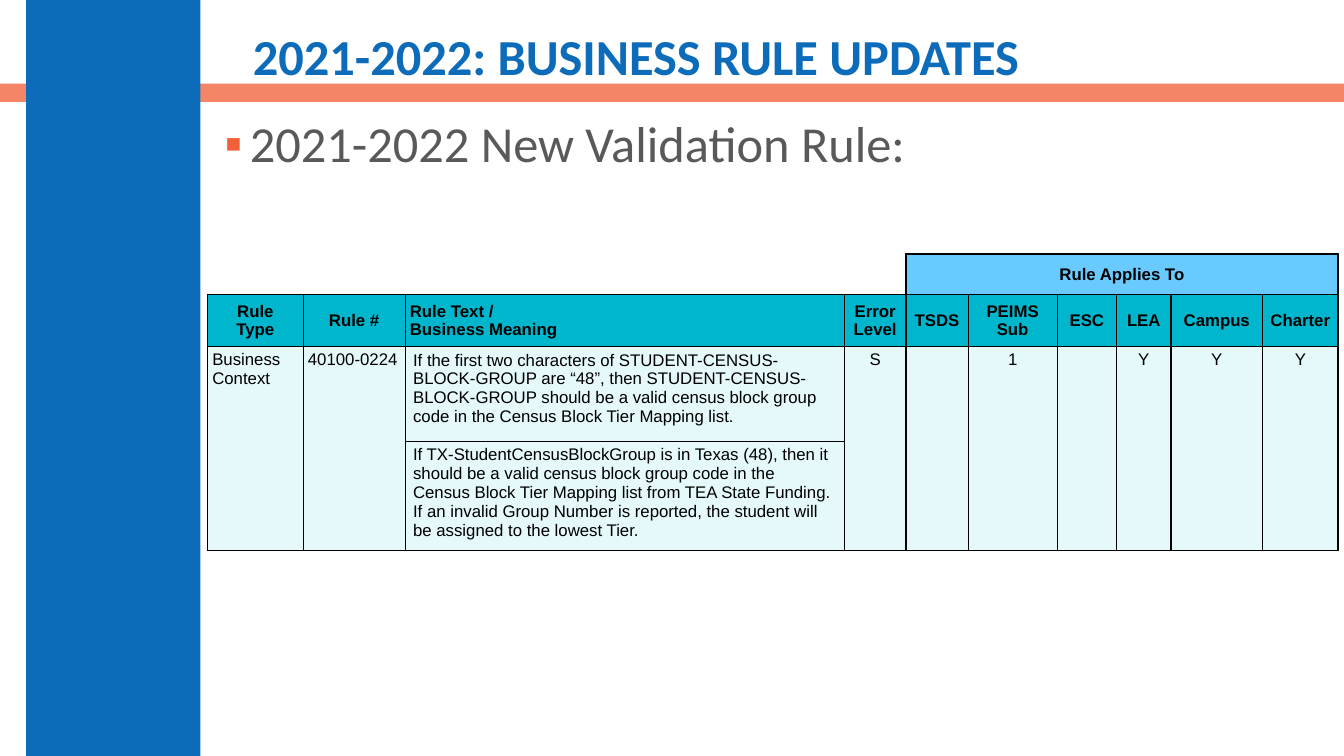
from dataclasses import dataclass

from lxml.etree import SubElement
from pptx import Presentation
from pptx.dml.color import RGBColor as Rgb
from pptx.enum.shapes import MSO_SHAPE as Form
from pptx.enum.text import MSO_ANCHOR as Anchor, MSO_AUTO_SIZE as Fit, PP_ALIGN as Align
from pptx.oxml.ns import qn
from pptx.util import Cm, Pt

HUES = {
    "blue": "0D6CB9",
    "coral": "F16038",
    "gray": "595959",
    "black": "000000",
    "white": "FFFFFF",
    "sky": "69CAFF",
    "teal": "00B6CD",
    "mist": "E5F8FA",
}
WIDTHS = (2.41, 2.57, 11.07, 1.55, 1.57, 2.24, 1.5, 1.37, 2.31, 1.9)
HEIGHTS = (1.02, 1.32, 2.39, 2.57)
HEADS = ("Rule\nType", "Rule #", "Rule Text /\nBusiness Meaning", "Error\nLevel",
         "TSDS", "PEIMS\nSub", "ESC", "LEA", "Campus", "Charter")
FACTS = (("Business", "Context"), ("40100-0224",),
         ("If the first two characters of STUDENT-CENSUS-BLOCK-GROUP are “48”, "
          "then STUDENT-CENSUS-BLOCK-GROUP should be a valid census block group "
          "code in the Census Block Tier Mapping list.",),
         ("S",), ("",), ("1",), ("",), ("Y",), ("Y",), ("Y",))
MEANING = ("If TX-StudentCensusBlockGroup is in Texas (48), then it should be a valid "
           "census block group code in the Census Block Tier Mapping list from TEA State "
           "Funding. If an invalid Group Number is reported, the student will be "
           "assigned to the lowest Tier.")
TEXT = 2
ERROR = 3


@dataclass
class Bar:
    left: float
    top: float
    width: float
    height: float
    hue: str
    alpha: int = 100


@dataclass
class Entry:
    row: int
    col: int
    lines: tuple[str, ...]
    hue: str
    bold: bool = False
    mid: bool = True
    wide: bool = False
    sides: str = "LRTB"


BARS = (
    Bar(0, 2.11, 33.87, 0.46, "coral", 76),
    Bar(0.66, 0, 4.39, 19.05, "blue"),
)


def tint(name: str) -> Rgb:
    return Rgb.from_string(HUES[name])


def style(font, size: int, hue: str, face: str, bold: bool = False) -> None:
    font.size = Pt(size)
    font.name = face
    font.bold = bold
    font.color.rgb = tint(hue)


def draw_bar(slide, bar: Bar) -> None:
    shape = slide.shapes.add_shape(Form.RECTANGLE, Cm(bar.left), Cm(bar.top),
                                   Cm(bar.width), Cm(bar.height))
    shape.shadow.inherit = False
    shape.line.fill.background()
    shape.fill.solid()
    shape.fill.fore_color.rgb = tint(bar.hue)
    if bar.alpha < 100:
        color = shape.fill._xPr.find(".//" + qn("a:srgbClr"))
        SubElement(color, qn("a:alpha"), val=str(bar.alpha * 1000))


def draw_title(slide) -> None:
    title = slide.shapes.title
    title.left, title.top = Cm(6.12), Cm(0.46)
    title.width, title.height = Cm(26.75), Cm(2.08)
    slide.shapes._spTree.append(title._element)
    frame = title.text_frame
    frame.auto_size = Fit.NONE
    frame.vertical_anchor = Anchor.MIDDLE
    para = frame.paragraphs[0]
    para.alignment = Align.LEFT
    para.line_spacing = 0.9
    run = para.add_run()
    run.text = "2021-2022: BUSINESS RULE UPDATES"
    style(run.font, 36, "blue", "Calibri", True)


def draw_point(slide) -> None:
    box = slide.shapes.add_textbox(Cm(5.41), Cm(2.87), Cm(28.17), Cm(2.62))
    frame = box.text_frame
    frame.word_wrap = True
    para = frame.paragraphs[0]
    para.line_spacing = 0.9
    props = para._p.get_or_add_pPr()
    props.set("marL", str(Cm(0.64)))
    props.set("indent", str(-Cm(0.64)))
    SubElement(SubElement(props, qn("a:buClr")), qn("a:srgbClr"), val=HUES["coral"])
    SubElement(props, qn("a:buFont"), typeface="Arial")
    SubElement(props, qn("a:buChar"), char="▪")
    run = para.add_run()
    run.text = "2021-2022 New Validation Rule:"
    style(run.font, 36, "gray", "Calibri")


def edge(cell, sides: str) -> None:
    props = cell._tc.get_or_add_tcPr()
    for side in "LRTB":
        line = SubElement(props, qn("a:ln" + side), w=str(Pt(1)))
        if side in sides:
            fill = SubElement(line, qn("a:solidFill"))
            SubElement(fill, qn("a:srgbClr"), val=HUES["black"])
        else:
            SubElement(line, qn("a:noFill"))


def draw_entry(table, entry: Entry) -> None:
    cell = table.cell(entry.row, entry.col)
    edge(cell, entry.sides)
    cell.fill.solid()
    cell.fill.fore_color.rgb = tint(entry.hue)
    cell.margin_left = cell.margin_right = Cm(0.2 if entry.wide else 0.12)
    cell.margin_top = cell.margin_bottom = Cm(0.1 if entry.wide else 0.08)
    cell.vertical_anchor = Anchor.MIDDLE if entry.bold else Anchor.TOP
    frame = cell.text_frame
    for spot, line in enumerate(entry.lines):
        para = frame.add_paragraph() if spot else frame.paragraphs[0]
        para.alignment = Align.CENTER if entry.mid else Align.LEFT
        style(para.font, 12, "black", "Arial", entry.bold)
        for turn, part in enumerate(line.split("\n")):
            if turn:
                para.add_line_break()
            if part:
                run = para.add_run()
                run.text = part
                style(run.font, 12, "black", "Arial", entry.bold)


def draw_table(slide) -> None:
    count = len(WIDTHS)
    table = slide.shapes.add_table(len(HEIGHTS), count, Cm(5.23), Cm(6.4),
                                   Cm(sum(WIDTHS)), Cm(sum(HEIGHTS))).table
    table.first_row = table.horz_banding = False
    for col, width in zip(table.columns, WIDTHS):
        col.width = Cm(width)
    for row, height in zip(table.rows, HEIGHTS):
        row.height = Cm(height)

    entries = []
    for col in range(count):
        text = col == TEXT
        if col <= ERROR:
            entries.append(Entry(0, col, ("",), "white", sides="RB" if col == ERROR else "B"))
        else:
            label = "Rule Applies To" if col == ERROR + 1 else ""
            entries.append(Entry(0, col, (label,), "sky", bold=True))
        entries.append(Entry(1, col, (HEADS[col],), "teal", bold=True, mid=not text))
        entries.append(Entry(2, col, FACTS[col], "mist", mid=col >= ERROR, wide=text))
        entries.append(Entry(3, col, (MEANING if text else "",), "mist", mid=False, wide=text))
    for entry in entries:
        draw_entry(table, entry)

    table.cell(0, 0).merge(table.cell(0, ERROR))
    table.cell(0, ERROR + 1).merge(table.cell(0, count - 1))
    for col in range(count):
        if col != TEXT:
            table.cell(2, col).merge(table.cell(3, col))


def main() -> None:
    deck = Presentation()
    deck.slide_width, deck.slide_height = Cm(33.87), Cm(19.05)
    slide = deck.slides.add_slide(deck.slide_layouts[5])
    for bar in BARS:
        draw_bar(slide, bar)
    draw_title(slide)
    draw_point(slide)
    draw_table(slide)
    deck.save("out.pptx")


if __name__ == "__main__":
    main()
